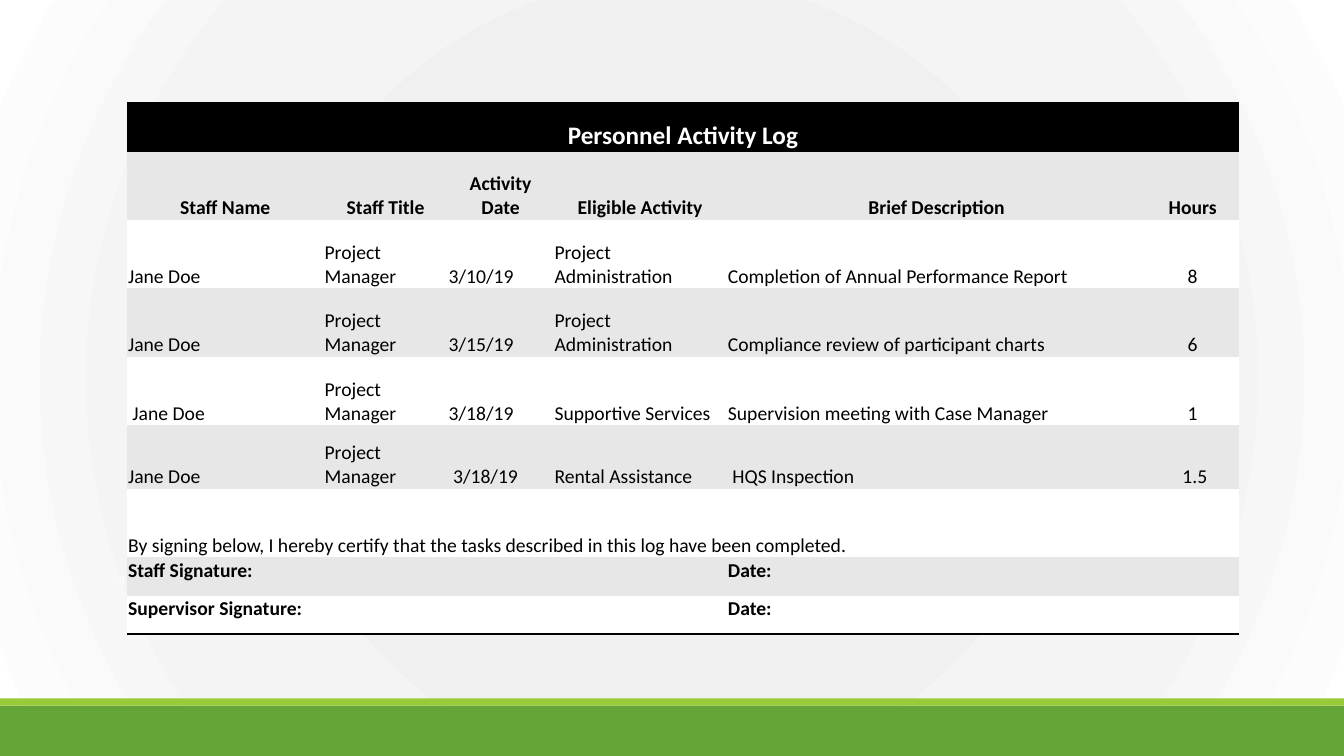
from dataclasses import dataclass

from pptx import Presentation
from pptx.dml.color import RGBColor
from pptx.enum.shapes import MSO_SHAPE
from pptx.enum.text import MSO_ANCHOR, PP_ALIGN
from pptx.oxml import parse_xml
from pptx.oxml.ns import nsdecls, qn
from pptx.util import Pt

LEFT, CENTER, RIGHT = PP_ALIGN.LEFT, PP_ALIGN.CENTER, PP_ALIGN.RIGHT
TOP, MIDDLE, BOTTOM = MSO_ANCHOR.TOP, MSO_ANCHOR.MIDDLE, MSO_ANCHOR.BOTTOM
RECTANGLE = MSO_SHAPE.RECTANGLE
NO_STYLE = "{2D5ABB26-0587-4C30-8999-92F81FD0307C}"


@dataclass(frozen=True)
class Theme:
    font: str = "Calibri"
    black: str = "000000"
    white: str = "FFFFFF"
    band: str = "E7E7E7"
    green: str = "63A537"
    lime: str = "99CB38"
    glow: tuple = ((0, "EBF5D7"), (34, "F0F0F0"), (70, "F4F4F4"), (100, "FFFFFF"))
    title_size: float = 18
    body_size: float = 14
    number_size: float = 10.5
    rule: float = 2


def px(n):
    """100 px to the inch, in EMU."""
    return n * 9144


def set_all(obj, values):
    for name, value in values.items():
        setattr(obj, name, value)


class Deck:
    def __init__(self, theme, width, height):
        self.theme = theme
        self.prs = Presentation()
        set_all(self.prs, {"slide_width": px(width), "slide_height": px(height)})
        self.s = self.prs.slides.add_slide(self.prs.slide_layouts[6])

    def background(self):
        self.s.background.fill.solid()
        bg = self.s.element.find(".//" + qn("p:bgPr"))
        stops = "".join(
            f'<a:gs pos="{pos * 1000}"><a:srgbClr val="{color}"/></a:gs>'
            for pos, color in self.theme.glow)
        bg.replace(bg[0], parse_xml(
            f'<a:gradFill {nsdecls("a")} rotWithShape="1"><a:gsLst>{stops}</a:gsLst>'
            '<a:path path="circle"><a:fillToRect l="100000" t="100000" r="100000" b="100000"/>'
            '</a:path></a:gradFill>'))

    def bar(self, x, y, w, h, color):
        sp = self.s.shapes.add_shape(RECTANGLE, px(x), px(y), px(w), px(h))
        sp.shadow.inherit = False
        sp.fill.solid()
        sp.fill.fore_color.rgb = RGBColor.from_string(color)
        sp.line.fill.background()

    def put_text(self, tf, text, size, color, align=LEFT, bold=False):
        tf.word_wrap = True
        tf.text = text
        for p in tf.paragraphs:
            p.alignment = align
            set_all(p.runs[0].font, {"name": self.theme.font, "size": Pt(size), "bold": bold})
            p.runs[0].font.color.rgb = RGBColor.from_string(color)

    def label(self, x, y, w, h, text, size, color, align):
        tf = self.s.shapes.add_textbox(px(x), px(y), px(w), px(h)).text_frame
        tf.vertical_anchor = MIDDLE
        self.put_text(tf, text, size, color, align)

    def table(self, x, y, widths, heights):
        frame = self.s.shapes.add_table(len(heights), len(widths), px(x), px(y),
                                        px(sum(widths)), px(sum(heights)))
        table = frame.table
        set_all(table, {"first_row": False, "horz_banding": False})
        frame.element.find(".//" + qn("a:tableStyleId")).text = NO_STYLE
        for column, width in zip(table.columns, widths):
            column.width = px(width)
        for row, height in zip(table.rows, heights):
            row.height = px(height)
        return table

    def row(self, table, index, texts, fill, aligns, size=None, color=None,
            bold=False, anchor=BOTTOM, borders=()):
        """Fill one row; a text of None joins its cell to the one on the left."""
        cells = list(table.rows[index].cells)
        starts = [i for i, text in enumerate(texts) if text is not None]
        for start, end in zip(starts, starts[1:] + [len(texts)]):
            if end - start > 1:
                cells[start].merge(cells[end - 1])
        for cell, text, align in zip(cells, texts, aligns):
            set_all(cell, {"margin_left": px(1), "margin_right": px(1), "margin_top": px(1),
                           "margin_bottom": 0, "vertical_anchor": anchor})
            cell.fill.solid()
            cell.fill.fore_color.rgb = RGBColor.from_string(fill)
            for side in borders:
                self.border(cell, side)
            if text is not None:
                self.put_text(cell.text_frame, text, size or self.theme.body_size,
                              color or self.theme.black, align, bold)

    def border(self, cell, side):
        cell._tc.get_or_add_tcPr().insert(0, parse_xml(
            f'<a:ln{side} {nsdecls("a")} w="{Pt(self.theme.rule)}"><a:solidFill>'
            f'<a:srgbClr val="{self.theme.black}"/></a:solidFill></a:ln{side}>'))


def activity_log(deck):
    t = deck.theme
    headings = ("Staff Name", "Staff Title", "Activity Date", "Eligible Activity",
                "Brief Description", "Hours")
    entries = (
        ("Jane Doe", "3/10/19", "Project\nAdministration",
         "Completion of Annual Performance Report", "8"),
        ("Jane Doe", "3/15/19", "Project\nAdministration",
         "Compliance review of participant charts", "6"),
        (" Jane Doe", "3/18/19", "Supportive Services",
         "Supervision meeting with Case Manager", "1"),
        ("Jane Doe", " 3/18/19", "Rental Assistance", " HQS Inspection", " 1.5"),
    )
    pledge = ("By signing below, I hereby certify that the tasks described "
              "in this log have been completed.")
    centered, left = [CENTER] * 6, [LEFT] * 6

    table = deck.table(126, 102, (195, 123, 105, 172, 416, 92),
                       (48, 68, 68, 68, 68, 63, 68, 38, 38))
    deck.row(table, 0, ["Personnel Activity Log"] + [None] * 5, t.black, centered,
             size=t.title_size, color=t.white, bold=True, borders="BT")
    deck.row(table, 1, headings, t.band, centered, bold=True)
    for i, (name, *details) in enumerate(entries, 2):
        deck.row(table, i, (name, "Project Manager", *details),
                 t.band if i % 2 else t.white, left[:5] + [CENTER])
    deck.row(table, 6, [pledge] + [None] * 5, t.white, left)
    for i, signer, fill, borders in ((7, "Staff", t.band, ""), (8, "Supervisor", t.white, "B")):
        deck.row(table, i, (f"{signer} Signature:", None, None, None, "Date:", None), fill, left,
                 bold=True, anchor=TOP, borders=borders)


def main():
    t = Theme()
    deck = Deck(t, 1333, 750)
    deck.background()
    deck.bar(0, 700, 1333, 50, t.green)
    deck.bar(0, 693, 1333, 7, t.lime)
    deck.label(53, 548, 89, 55, "45", t.number_size, t.white, RIGHT)
    activity_log(deck)
    deck.prs.save("out.pptx")


if __name__ == "__main__":
    main()
